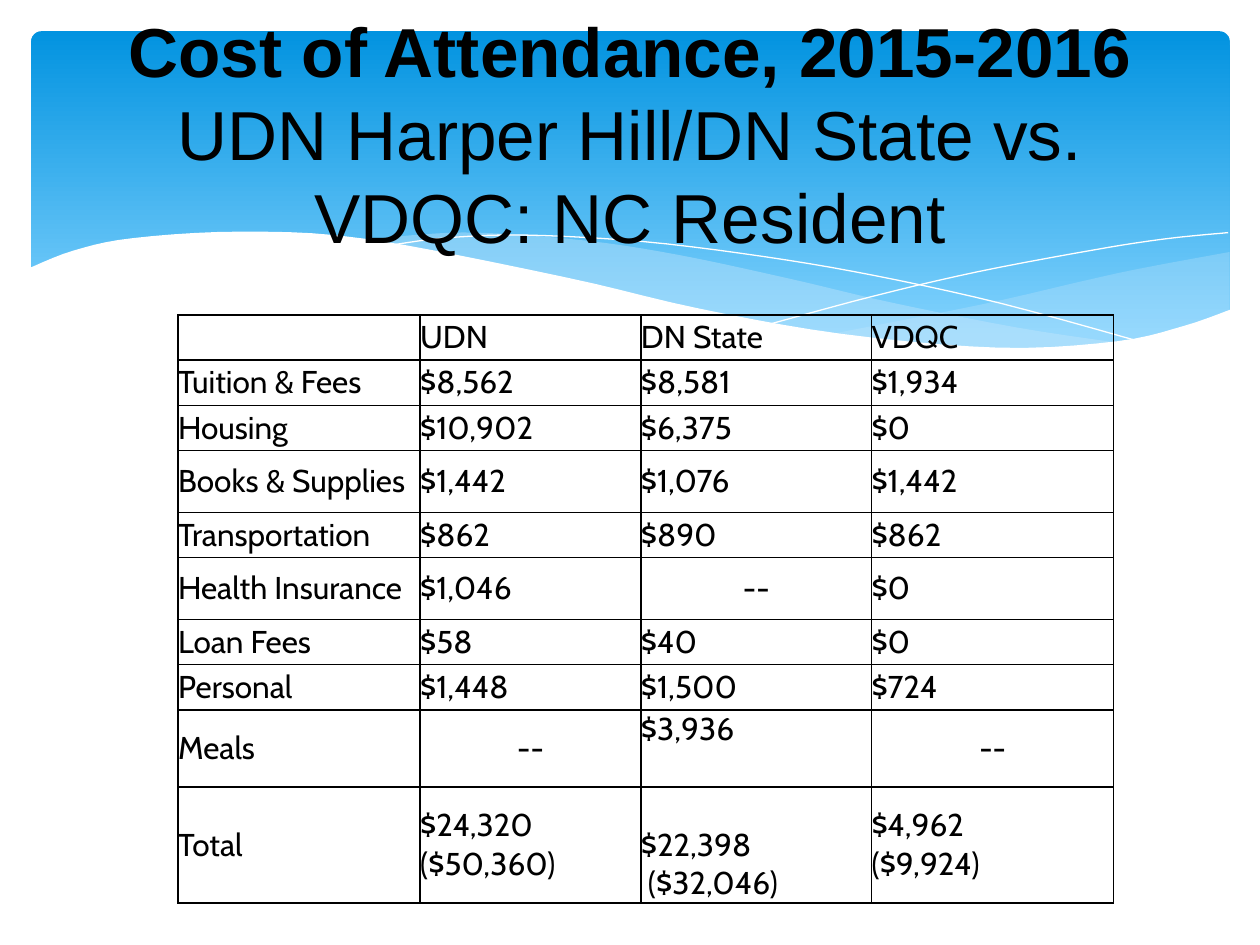
import dataclasses

import lxml.etree
import pptx
import pptx.dml.color
import pptx.enum.dml
import pptx.enum.shapes
import pptx.enum.text
import pptx.oxml.ns
import pptx.util

Cm = pptx.util.Cm
Pt = pptx.util.Pt
qn = pptx.oxml.ns.qn
Align = pptx.enum.text.PP_ALIGN
Anchor = pptx.enum.text.MSO_ANCHOR


@dataclasses.dataclass(frozen=True)
class Theme:
    deep_blue: str = "0293E0"
    light_blue: str = "83D3FE"
    pale_blue: str = "C6E7FC"
    white: str = "FFFFFF"
    black: str = "000000"
    title_font: str = "Arial"
    table_font: str = "Cabin"
    title_size: float = 39.6
    table_size: float = 18
    rule_width: float = 1


THEME = Theme()

# Wave knots in cm, measured from the corner of the banner
BASE_WAVE = [(-0.05, 4.78), (0.86, 4.42), (2.06, 4.17), (4.27, 4.04), (6.78, 4.19),
             (10.72, 4.95), (13.46, 5.59), (16.33, 6.1), (19.51, 6.38),
             (21.89, 6.25), (23.24, 5.94), (24.18, 5.61)]
BASE_CORNERS = [(24.18, 7.72), (-0.05, 7.72)]
RIGHT_TOP = [(24.16, 4.45), (22.38, 4.78), (21.23, 5.03), (19.15, 5.51), (16.15, 6.1)]
RIGHT_BOTTOM = [(16.15, 6.1), (17.27, 6.25), (18.59, 6.38), (20.04, 6.43),
                (21.29, 6.35), (22.56, 6.15), (23.47, 5.89), (24.16, 5.64)]
MIDDLE_TOP = [(22.05, 6.3), (19.86, 5.97), (17.3, 5.46), (15.34, 5), (13.11, 4.52),
              (11.18, 4.22), (9.02, 4.06), (7.7, 4.11), (6.63, 4.22)]
MIDDLE_BOTTOM = [(6.63, 4.22), (8.56, 4.52), (10.77, 5), (13.74, 5.66), (15.88, 6.07),
                 (18.06, 6.35), (20.14, 6.43), (22.05, 6.3)]
FALLING_LINE = [(7.21, 4.32), (8.33, 4.17), (9.93, 4.11), (12.32, 4.24), (14.81, 4.55),
                (17.02, 4.93), (19.56, 5.49), (22.4, 6.27)]
RISING_LINE = [(14.94, 5.89), (17.02, 5.33), (19.08, 4.85), (21.36, 4.42),
               (22.83, 4.19), (24.13, 4.06)]

COLUMN_WIDTHS = [4.88, 4.45, 4.65, 4.88]
ROW_HEIGHT = 0.91
TALL_ROWS = {"Books & Supplies": 1.25, "Health Insurance": 1.25, "Meals": 1.55, "Total": 2.34}
COSTS = [
    ["", "UDN", "DN State", "VDQC"],
    ["Tuition & Fees", "$8,562", "$8,581", "$1,934"],
    ["Housing", "$10,902", "$6,375", "$0"],
    ["Books & Supplies", "$1,442", "$1,076", "$1,442"],
    ["Transportation", "$862", "$890", "$862"],
    ["Health Insurance", "$1,046", "--", "$0"],
    ["Loan Fees", "$58", "$40", "$0"],
    ["Personal", "$1,448", "$1,500", "$724"],
    ["Meals", "--", "$3,936", "--"],
    ["Total", "$24,320 ($50,360)", "$22,398\n ($32,046)", "$4,962\n($9,924)"],
]
CELL_ANCHORS = {"$3,936": Anchor.TOP, "$22,398\n ($32,046)": Anchor.BOTTOM}


def rgb(value):
    return pptx.dml.color.RGBColor.from_string(value)


def set_font(font, name, size):
    font.name, font.size = name, Pt(size)
    font.color.rgb = rgb(THEME.black)


def smooth(knots, steps=5):
    """Return points on a Catmull-Rom curve through the knots."""
    ends = [knots[0], *knots, knots[-1]]
    points = []
    for a, b, c, d in zip(ends, ends[1:], ends[2:], ends[3:]):
        for t in (step / steps for step in range(steps)):
            points.append(tuple(
                (2 * q + (r - p) * t + (2 * p - 5 * q + 4 * r - s) * t ** 2
                 + (3 * q - p - 3 * r + s) * t ** 3) / 2
                for p, q, r, s in zip(a, b, c, d)))
    return points + [knots[-1]]


def add_outline(page, left, top, points, closed):
    places = [(left + Cm(x), top + Cm(y)) for x, y in points]
    builder = page.shapes.build_freeform(*places[0])
    builder.add_line_segments(places[1:], close=closed)
    shape = builder.convert_to_shape()
    shape.shadow.inherit = False
    return shape


def add_wave(page, left, top, points, color, opacity=100):
    wave = add_outline(page, left, top, points, closed=True)
    wave.fill.solid()
    wave.fill.fore_color.rgb = rgb(color)
    wave.line.fill.background()
    if opacity < 100:
        tint = wave.fill._xPr.find(".//" + qn("a:srgbClr"))
        lxml.etree.SubElement(tint, qn("a:alpha"), val=str(opacity * 1000))


def add_banner(page, left, top, width, height):
    # Gradient panel
    panel = page.shapes.add_shape(
        pptx.enum.shapes.MSO_SHAPE.ROUNDED_RECTANGLE, left, top, width, height)
    panel.adjustments[0] = 0.03
    panel.shadow.inherit = False
    panel.line.fill.background()
    panel.fill.gradient()
    panel.fill.gradient_angle = 270
    stops = zip(panel.fill.gradient_stops, (0, 0.9), (THEME.deep_blue, THEME.light_blue))
    for stop, position, color in stops:
        stop.position = position
        stop.color.rgb = rgb(color)

    # Translucent waves, thin lines, then the white base
    add_wave(page, left, top, smooth(RIGHT_TOP) + smooth(RIGHT_BOTTOM), THEME.pale_blue, 29)
    add_wave(page, left, top, smooth(MIDDLE_TOP) + smooth(MIDDLE_BOTTOM), THEME.pale_blue, 40)
    for knots in (FALLING_LINE, RISING_LINE):
        curve = add_outline(page, left, top, smooth(knots), closed=False)
        curve.fill.background()
        curve.line.color.rgb = rgb(THEME.white)
        curve.line.width = Pt(0)
    add_wave(page, left, top, smooth(BASE_WAVE) + BASE_CORNERS, THEME.white)


def add_title(page, left, top, width, height):
    frame = page.shapes.add_textbox(left, top, width, height).text_frame
    frame.word_wrap = True
    frame.vertical_anchor = Anchor.MIDDLE
    para = frame.paragraphs[0]
    para.alignment = Align.CENTER
    set_font(para.font, THEME.title_font, THEME.title_size)
    span = para.add_run()
    span.text = "Cost of Attendance, 2015-2016"
    span.font.bold = True
    para.add_line_break()
    para.add_run().text = "UDN Harper Hill/DN State vs. VDQC: NC Resident"


def style_cell(cell, text):
    cell.margin_left = cell.margin_right = cell.margin_top = cell.margin_bottom = 0
    cell.vertical_anchor = CELL_ANCHORS.get(text, Anchor.MIDDLE)
    cell.text = text
    for para in cell.text_frame.paragraphs:
        set_font(para.font, THEME.table_font, THEME.table_size)
        para.alignment = Align.CENTER if text == "--" else Align.LEFT
    properties = cell._tc.get_or_add_tcPr()
    for side in ("a:lnL", "a:lnR", "a:lnT", "a:lnB"):
        rule = lxml.etree.SubElement(properties, qn(side), w=str(Pt(THEME.rule_width)))
        paint = lxml.etree.SubElement(rule, qn("a:solidFill"))
        lxml.etree.SubElement(paint, qn("a:srgbClr"), val=THEME.black)
    cell.fill.background()


def add_cost_table(page, left, top):
    heights = [TALL_ROWS.get(row[0], ROW_HEIGHT) for row in COSTS]
    table = page.shapes.add_table(len(COSTS), len(COLUMN_WIDTHS), left, top,
                                  Cm(sum(COLUMN_WIDTHS)), Cm(sum(heights))).table
    table.first_row = table.horz_banding = False
    for column, width in zip(table.columns, COLUMN_WIDTHS):
        column.width = Cm(width)
    for row, height, texts in zip(table.rows, heights, COSTS):
        row.height = Cm(height)
        for cell, text in zip(row.cells, texts):
            style_cell(cell, text)


def main():
    deck = pptx.Presentation()
    deck.slide_width, deck.slide_height = Cm(25.4), Cm(19.05)
    page = deck.slides.add_slide(deck.slide_layouts[6])
    add_banner(page, Cm(0.63), Cm(0.63), Cm(24.16), Cm(6.86))
    add_title(page, Cm(1.27), Cm(0.94), Cm(22.86), Cm(3.48))
    add_cost_table(page, Cm(3.59), Cm(6.35))
    deck.save("out.pptx")


if __name__ == "__main__":
    main()
